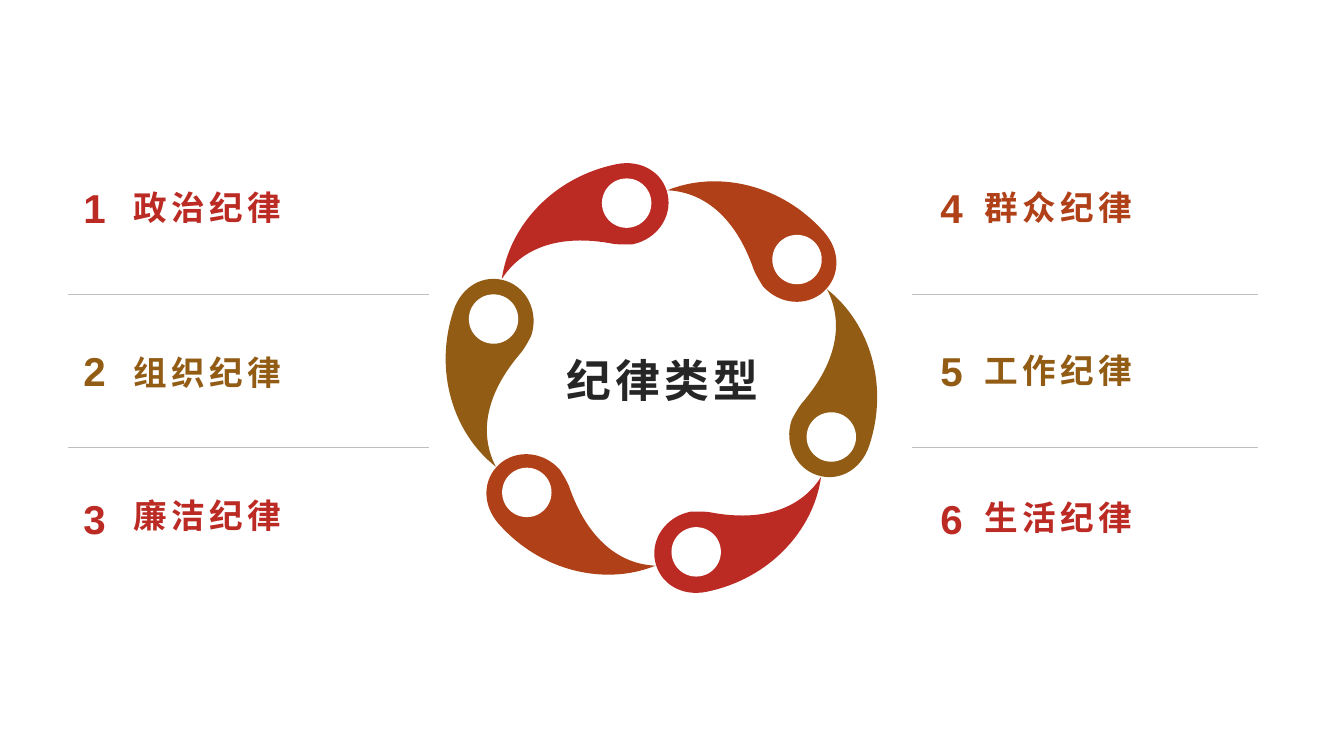
from math import cos, radians, sin

from lxml.etree import SubElement
from pptx import Presentation
from pptx.dml.color import RGBColor
from pptx.enum.shapes import MSO_CONNECTOR, MSO_SHAPE
from pptx.enum.text import MSO_ANCHOR, MSO_AUTO_SIZE, PP_ALIGN
from pptx.oxml.ns import qn
from pptx.util import Pt

PX = 9144
RED, RUST, OCHRE = "BB2B24", "B04017", "925C15"


def paint(color_format, hex_color):
    color_format.rgb = RGBColor.from_string(hex_color)


def write(box, text, size, hex_color, spacing=0):
    frame = box.text_frame
    frame.word_wrap = True
    frame.auto_size = MSO_AUTO_SIZE.NONE
    frame.text = text
    para = frame.paragraphs[0]
    span = para.runs[0]
    span.font.name = "Arial"
    span.font.size = Pt(size)
    span.font.bold = True
    paint(span.font.color, hex_color)
    if spacing:
        span._r.get_or_add_rPr().set("spc", str(spacing * 100))
    return frame, para


deck = Presentation()
deck.slide_width, deck.slide_height = 1333 * PX, 750 * PX
page = deck.slides.add_slide(deck.slide_layouts[5])
shapes = page.shapes

title = shapes.title
title.left, title.top, title.width, title.height = 538 * PX, 323 * PX, 238 * PX, 107 * PX
frame, para = write(title, "纪律类型", 32, "262626", 3)
frame.vertical_anchor = MSO_ANCHOR.MIDDLE
para.alignment = PP_ALIGN.CENTER

columns = [
    (73, 123, 67, 425, 1.3, [
        ("1", "政治纪律", RED, 182),
        ("2", "组织纪律", OCHRE, 346),
        ("3", "廉洁纪律", RED, 488),
    ]),
    (923, 967, 905, 1248, 1.2, [
        ("4", "群众纪律", RUST, 182),
        ("5", "工作纪律", OCHRE, 344),
        ("6", "生活纪律", RED, 490),
    ]),
]
number_tops = [177, 339, 485]
for number_left, label_left, line_start, line_end, leading, entries in columns:
    for line_y in (292, 444):
        divider = shapes.add_connector(
            MSO_CONNECTOR.STRAIGHT, line_start * PX, line_y * PX, line_end * PX, line_y * PX)
        paint(divider.line.color, "BFBFBF")
        divider.line.width = Pt(0.25)
        SubElement(divider._element.spPr, qn("a:effectLst"))

    for number_top, (number, label, hex_color, label_top) in zip(number_tops, entries):
        number_box = shapes.add_textbox(number_left * PX, number_top * PX, 44 * PX, 63 * PX)
        write(number_box, number, 28.8, hex_color)

        label_box = shapes.add_textbox(label_left * PX, label_top * PX, 284 * PX, 43 * PX)
        frame, para = write(label_box, label, 24, hex_color, 3)
        frame.vertical_anchor = MSO_ANCHOR.BOTTOM
        frame.margin_bottom = 0
        para.line_spacing = leading

PETAL_WIDTH, PETAL_HEIGHT = 178, 89
petal_start = (62, 12)
petal_curves = [
    [(56, 10), (50, 9), (44, 8)],
    [(19, 8), (0, 27), (0, 49)],
    [(0, 72), (19, 89), (44, 89)],
    [(107, 89), (160, 51), (178, 0)],
    [(154, 25), (115, 34), petal_start],
]
ring_center = complex(656, 375)
first_petal = complex(-80, -159.5)
ring = []
for index, hex_color in enumerate([RED, RUST, OCHRE] * 2):
    angle = radians(60 * index)
    middle = ring_center + first_petal * complex(cos(angle), sin(angle))

    builder = shapes.build_freeform(0, 0, scale=PX)
    builder.add_line_segments(
        [(PETAL_WIDTH, 0), (PETAL_WIDTH, PETAL_HEIGHT), (0, PETAL_HEIGHT)])
    petal = builder.convert_to_shape()
    petal.width, petal.height = PETAL_WIDTH * PX, PETAL_HEIGHT * PX
    petal.left = round((middle.real - PETAL_WIDTH / 2) * PX)
    petal.top = round((middle.imag - PETAL_HEIGHT / 2) * PX)
    petal.rotation = (168.5 + 60 * index) % 360

    outline = petal._element.spPr.find(".//" + qn("a:path"))
    for segment in list(outline):
        outline.remove(segment)
    outline.set("w", str(PETAL_WIDTH))
    outline.set("h", str(PETAL_HEIGHT))
    for tag, points in [("a:moveTo", [petal_start])] + [
            ("a:cubicBezTo", curve) for curve in petal_curves]:
        segment = SubElement(outline, qn(tag))
        for x, y in points:
            SubElement(segment, qn("a:pt"), x=str(x), y=str(y))
    SubElement(outline, qn("a:close"))
    ring.append((petal, hex_color))

HOLE = 49
for left, top in [(597, 177), (766, 233), (800, 409), (666, 523), (498, 464), (465, 292)]:
    hole = shapes.add_shape(MSO_SHAPE.OVAL, left * PX, top * PX, HOLE * PX, HOLE * PX)
    ring.append((hole, "FFFFFF"))

for shape, fill_color in ring:
    shape.shadow.inherit = False
    shape.fill.solid()
    paint(shape.fill.fore_color, fill_color)
    shape.line.fill.background()

deck.save("out.pptx")
